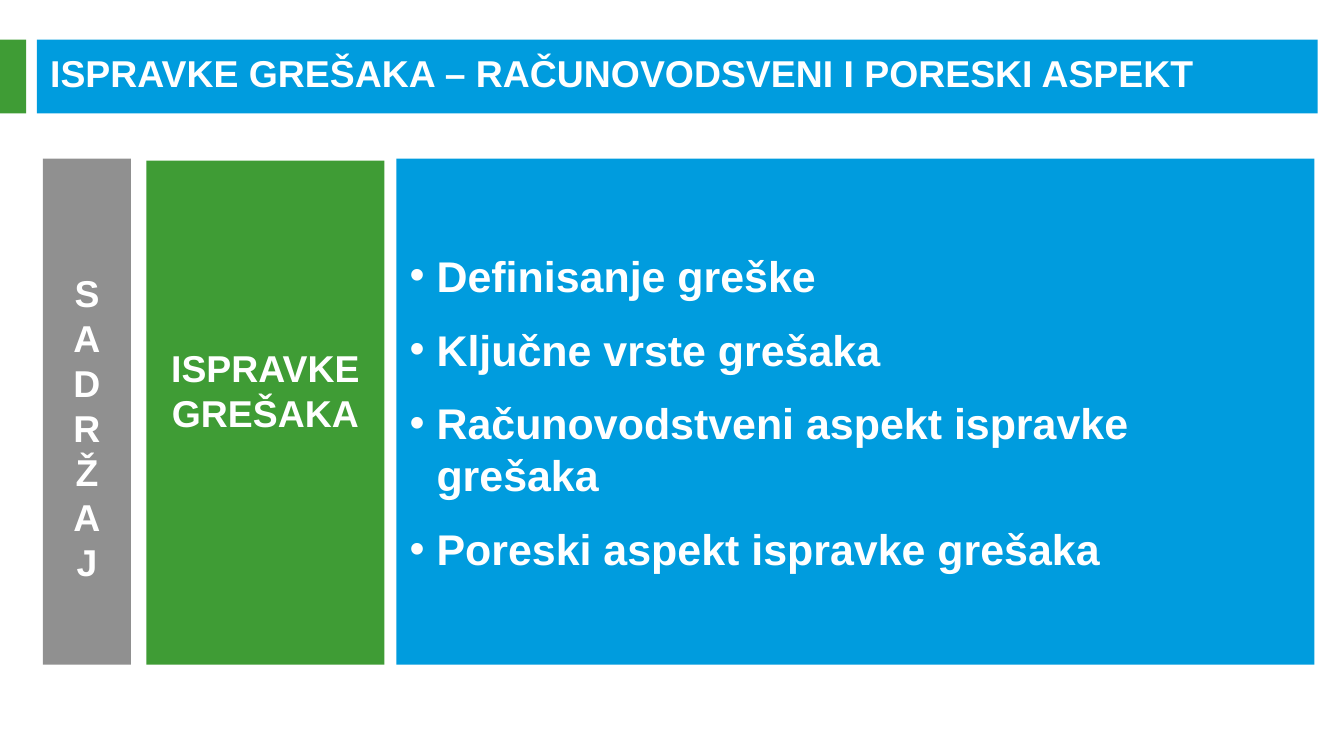
from lxml import etree
from pptx import Presentation
from pptx.dml.color import RGBColor
from pptx.enum.shapes import MSO_SHAPE
from pptx.enum.text import MSO_ANCHOR, PP_ALIGN
from pptx.oxml.ns import qn
from pptx.util import Emu, Pt

PX = 4572
BLUE = RGBColor(0x00, 0x9C, 0xDE)
GREEN = RGBColor(0x3F, 0x9C, 0x35)
GRAY = RGBColor(0x80, 0x80, 0x80)
WHITE = RGBColor(0xFF, 0xFF, 0xFF)
FONT = "Arial"
RECTANGLE = MSO_SHAPE.RECTANGLE
MIDDLE = MSO_ANCHOR.MIDDLE
LEFT = PP_ALIGN.LEFT
CENTER = PP_ALIGN.CENTER

TITLE = "ISPRAVKE GREŠAKA – RAČUNOVODSVENI I PORESKI ASPEKT"
TOPICS = [
    "Definisanje greške",
    "Ključne vrste grešaka",
    "Računovodstveni aspekt ispravke grešaka",
    "Poreski aspekt ispravke grešaka",
]


def px(value):
    return Emu(value * PX)


def add_panel(slide, left, top, width, height, color, opacity=100):
    shape = slide.shapes.add_shape(RECTANGLE, px(left), px(top), px(width), px(height))
    shape.shadow.inherit = False
    shape.line.fill.background()
    shape.fill.solid()
    shape.fill.fore_color.rgb = color
    if opacity < 100:
        color_element = shape.fill._xPr.find(qn("a:solidFill"))[0]
        etree.SubElement(color_element, qn("a:alpha"), val=str(opacity * 1000))
    return shape


def add_bullet(paragraph):
    properties = paragraph._p.get_or_add_pPr()
    properties.set("marL", str(px(40)))
    properties.set("indent", str(px(-40)))
    etree.SubElement(properties, qn("a:buFont"), typeface=FONT)
    etree.SubElement(properties, qn("a:buChar"), char="•")


def write_lines(shape, lines, size=20, alignment=CENTER, bulleted=False, top=10, bottom=10):
    frame = shape.text_frame
    frame.word_wrap = True
    frame.vertical_anchor = MIDDLE
    frame.margin_top = px(top)
    frame.margin_bottom = px(bottom)
    for index, line in enumerate(lines):
        paragraph = frame.add_paragraph() if index else frame.paragraphs[0]
        paragraph.text = line
        paragraph.alignment = alignment
        if bulleted:
            if index:
                paragraph.space_before = Pt(6)
            paragraph.space_after = Pt(6)
            add_bullet(paragraph)
        paragraph.font.name = FONT
        paragraph.font.size = Pt(size)
        paragraph.font.bold = True
        paragraph.font.color.rgb = WHITE


def main():
    presentation = Presentation()
    presentation.slide_width = px(2000)
    presentation.slide_height = px(1125)
    slide = presentation.slides.add_slide(presentation.slide_layouts[6])

    add_panel(slide, 55, 59, 1906, 110, BLUE)
    add_panel(slide, 0, 59, 39, 110, GREEN)
    title = slide.shapes.add_textbox(px(55), px(78), px(1872), px(60))
    write_lines(title, [TITLE], alignment=LEFT, top=0, bottom=0)

    subject = add_panel(slide, 218, 239, 354, 750, GREEN)
    write_lines(subject, ["ISPRAVKE GREŠAKA"], bottom=76)

    contents = add_panel(slide, 64, 236, 131, 753, GRAY, opacity=87)
    write_lines(contents, "SADRŽAJ", top=56)

    topics = add_panel(slide, 590, 236, 1366, 753, BLUE)
    write_lines(topics, TOPICS, size=23, alignment=LEFT, bulleted=True)

    presentation.save("out.pptx")


if __name__ == "__main__":
    main()
